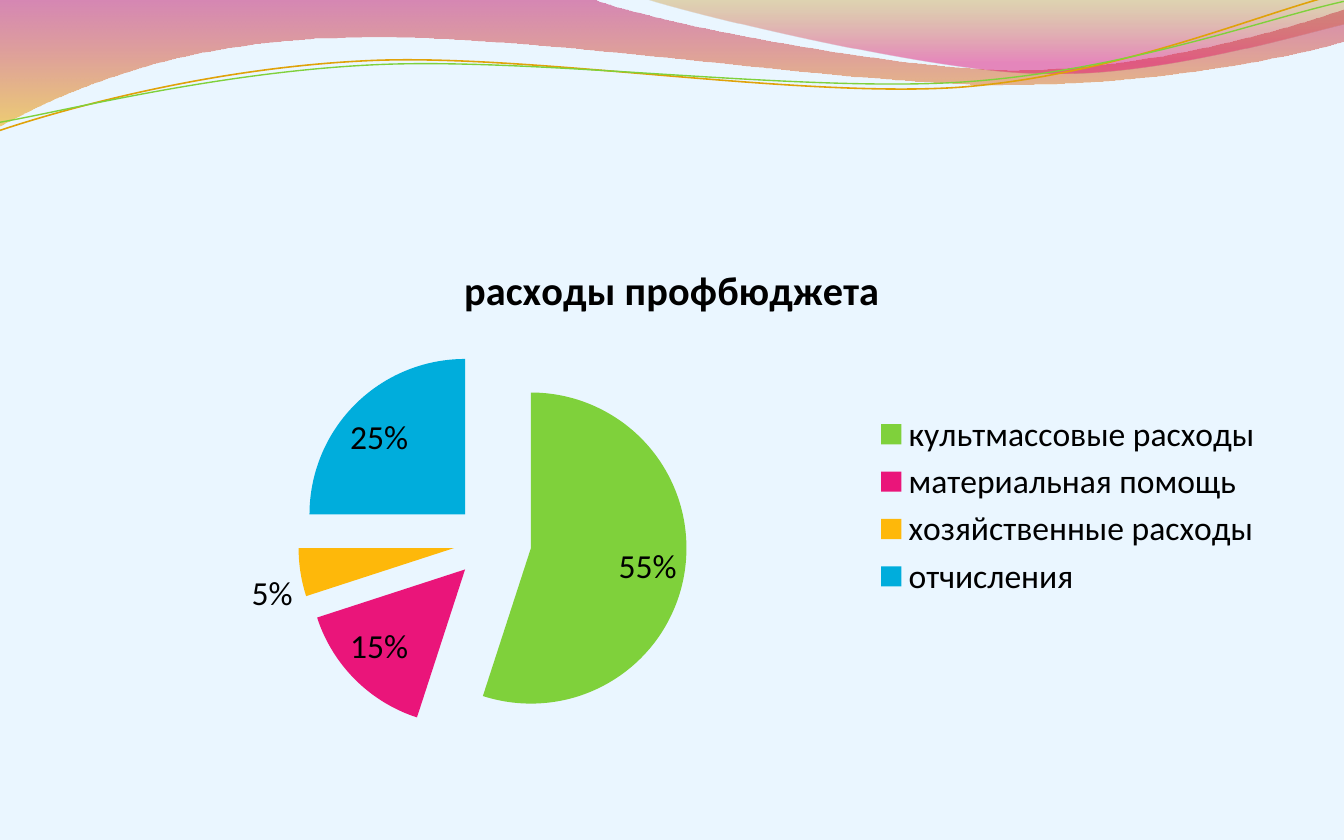
import math

import pptx
import pptx.chart.data
import pptx.dml.color
import pptx.enum.chart
import pptx.oxml
import pptx.oxml.ns
import pptx.util
from pptx.util import Inches

# Each outline is a start point, then a point for a line or three for a curve.
WAVE_BANDS = [
    ([[(0, 0)], [(4.4, -0.01)],
      [(4.76, 0.14), (6.64, 0.52), (7.58, 0.52)],
      [(8.53, 0.52), (9.58, 0.21), (10, 0.07)], [(10.01, 0.3)],
      [(9.83, 0.37), (8.7, 0.63), (7.46, 0.63)],
      [(6.22, 0.63), (3.82, 0.23), (2.57, 0.28)],
      [(1.29, 0.3), (0.46, 0.69), (-0.01, 0.94)], [(0, 0)]],
     [(0, "BD0059", 45), (1, "F0AB00", 55)]),
    ([[(4.79, -0.01)],
      [(5.09, 0.09), (6.82, 0.51), (7.69, 0.54)],
      [(8.56, 0.58), (9.61, 0.27), (10, 0.18)], [(10, 0)], [(4.79, -0.01)]],
     [(0, "C38B00", 30), (0.8, "E1006B", 45)]),
]
WAVE_LINES = [
    ([[(0, 0.97)], [(0.48, 0.81), (1.58, 0.5), (2.77, 0.45)],
      [(3.95, 0.4), (5.92, 0.73), (7.13, 0.65)],
      [(8.33, 0.56), (9.39, 0.09), (9.98, -0.05)]], "E0A209", 0.85),
    ([[(0, 0.91)], [(0.47, 0.83), (1.64, 0.53), (2.83, 0.48)],
      [(4.03, 0.43), (5.97, 0.69), (7.17, 0.61)],
      [(8.36, 0.53), (9.41, 0.14), (10, 0.01)]], "7FD13B", 0.75),
]
LINE_TILT = 2.7  # degrees counter-clockwise
EXPENSES = [
    ("культмассовые расходы", 0.55, "7FD13B"),
    ("материальная помощь", 0.15, "EA157A"),
    ("хозяйственные расходы", 0.05, "FEB80A"),
    ("отчисления", 0.25, "00ADDC"),
]
CHART_TITLE = "расходы профбюджета"


def color(value):
    return pptx.dml.color.RGBColor.from_string(value)


def make_tag(name, prefix, value):
    return pptx.oxml.parse_xml(
        f'<{prefix}:{name} {pptx.oxml.ns.nsdecls(prefix)} val="{value}"/>')


def set_opacities(element, percents):
    """Set the opacity of each colour found in the element, in order."""
    tags = element.iter(pptx.oxml.ns.qn("a:srgbClr"))
    for tag, percent in zip(list(tags), percents):
        tag.append(make_tag("alpha", "a", percent * 1000))


def style_font(font, size, bold=False):
    font.name = "Calibri"
    font.size = pptx.util.Pt(size)
    font.bold = bold
    font.color.rgb = color("000000")


def level(outline):
    """Turn an outline back by the tilt that its shape will get."""
    points = [point for segment in outline for point in segment]
    center_x, center_y = ((points[0][axis] + points[-1][axis]) / 2 for axis in (0, 1))
    cosine, sine = math.cos(math.radians(LINE_TILT)), math.sin(math.radians(LINE_TILT))
    return [[(center_x + (x - center_x) * cosine - (y - center_y) * sine,
              center_y + (x - center_x) * sine + (y - center_y) * cosine)
             for x, y in segment] for segment in outline]


def add_outline(page, box, outline, close):
    left, top = box[:2]
    points = [(left + Inches(x), top + Inches(y))
              for segment in outline for x, y in segment]
    builder = page.shapes.build_freeform(*points[0], scale=1.0)
    builder.add_line_segments(points[1:], close=close)
    shape = builder.convert_to_shape()
    shape.shadow.inherit = False
    # Join every three control points into one cubic curve
    steps = list(shape._element.iter(pptx.oxml.ns.qn("a:lnTo")))
    for segment in outline[1:]:
        parts, steps = steps[:len(segment)], steps[len(segment):]
        if len(segment) == 3:
            curve = pptx.oxml.parse_xml(
                f'<a:cubicBezTo {pptx.oxml.ns.nsdecls("a")}/>')
            parts[0].addprevious(curve)
            for part in parts:
                curve.append(part[0])
                part.getparent().remove(part)
    return shape


def fill_gradient(shape, stops):
    shape.fill.gradient()
    shape.fill.gradient_angle = 270  # counter-clockwise, so top to bottom
    for stop, (position, value, _) in zip(shape.fill.gradient_stops, stops):
        stop.position = position
        stop.color.rgb = color(value)
    set_opacities(shape._element.spPr, [opacity for _, _, opacity in stops])


def add_wave(page, box):
    # Translucent bands
    for outline, stops in WAVE_BANDS:
        band = add_outline(page, box, outline, close=True)
        fill_gradient(band, stops)
        band.line.fill.background()
    # Thin tilted lines
    for outline, value, width in WAVE_LINES:
        curve = add_outline(page, box, level(outline), close=False)
        curve.rotation = -LINE_TILT
        curve.fill.background()
        curve.line.color.rgb = color(value)
        curve.line.width = pptx.util.Pt(width)


def add_expense_chart(page, box):
    names, shares, colors = zip(*EXPENSES)
    data = pptx.chart.data.CategoryChartData(number_format="0%")
    data.categories = names
    data.add_series(CHART_TITLE, shares)
    chart = page.shapes.add_chart(pptx.enum.chart.XL_CHART_TYPE.PIE, *box, data).chart
    style_font(chart.font, 18)

    # Title and legend
    chart.has_title = True
    title = chart.chart_title.text_frame
    title.text = CHART_TITLE
    style_font(title.paragraphs[0].font, 21.6, bold=True)
    chart.has_legend = True
    chart.legend.position = pptx.enum.chart.XL_LEGEND_POSITION.RIGHT
    chart.legend.include_in_layout = False

    # Slices, pulled apart
    plot = chart.plots[0]
    plot.vary_by_categories = True
    series = plot.series[0]
    for index, value in enumerate(colors):
        fill = series.points[index].format.fill
        fill.solid()
        fill.fore_color.rgb = color(value)
    first_slice = series._element.find(pptx.oxml.ns.qn("c:dPt"))
    first_slice.addprevious(make_tag("explosion", "c", 25))

    # Share labels
    labels = series.data_labels
    labels.show_value = True
    labels.show_percentage = False
    labels.number_format = "0%"
    labels.number_format_is_linked = False
    labels.position = pptx.enum.chart.XL_LABEL_POSITION.BEST_FIT
    style_font(labels.font, 18)


def main():
    deck = pptx.Presentation()
    deck.slide_width, deck.slide_height = Inches(10), Inches(6.25)
    page = deck.slides.add_slide(deck.slide_layouts[6])
    # Pale blue background
    page.background.fill.solid()
    page.background.fill.fore_color.rgb = color("E7F5FF")
    set_opacities(page._element, [87])
    add_wave(page, (Inches(0), Inches(0), Inches(10), Inches(0.97)))
    add_expense_chart(page, (Inches(0.5), Inches(1.76), Inches(9), Inches(4)))
    deck.save("out.pptx")


if __name__ == "__main__":
    main()
